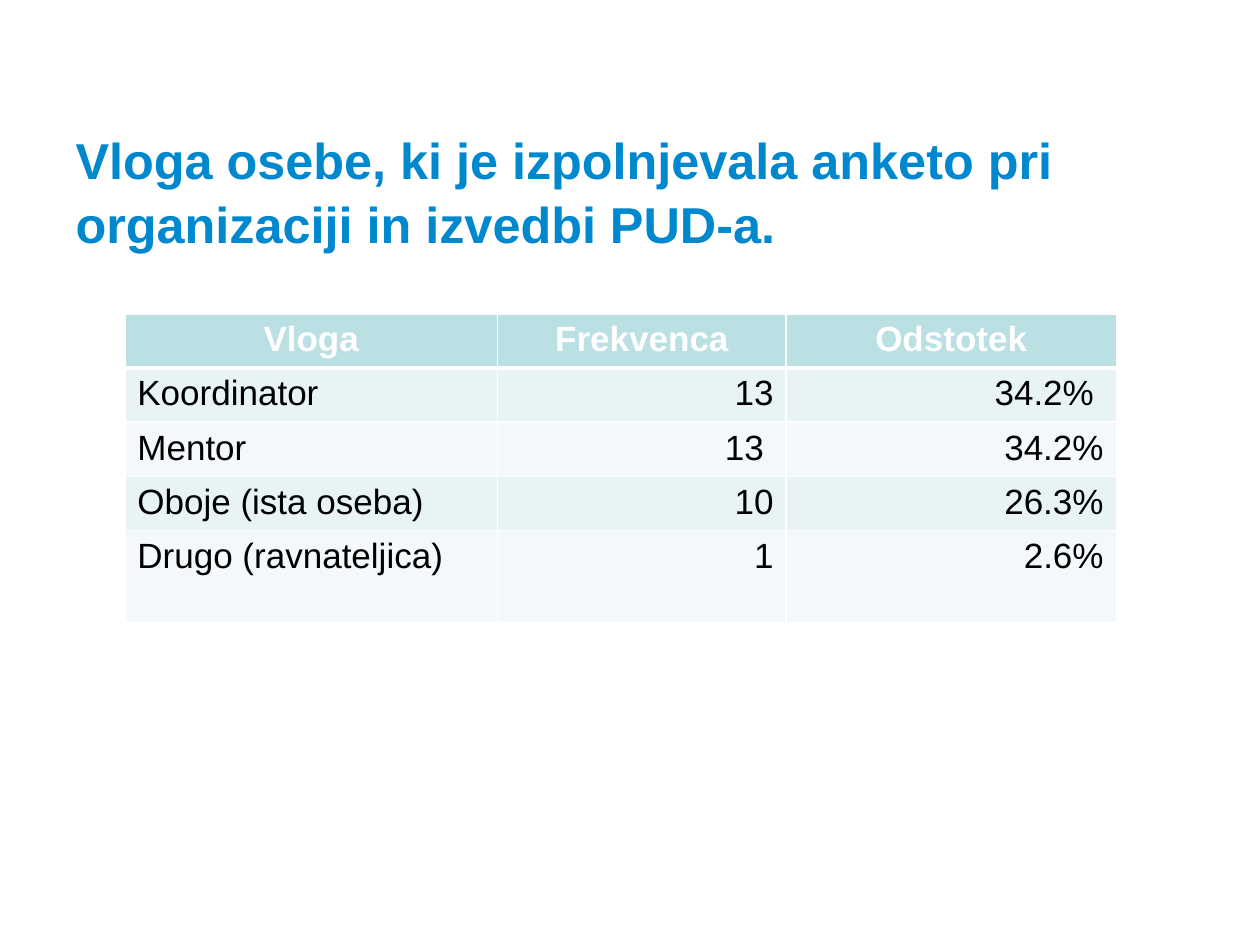
from lxml import etree
from pptx import Presentation
from pptx import util as u
from pptx.dml.color import RGBColor
from pptx.enum import text
from pptx.oxml import ns

COLORS = {"title": "0088CE", "header": "BBE0E3", "odd": "E7F3F4",
          "even": "F3F9FA", "white": "FFFFFF", "black": "000000"}
FONT = "Arial"
WIDTH, HEIGHT = u.Inches(10), u.Inches(7.5)
TITLE = "Vloga osebe, ki je izpolnjevala anketo pri organizaciji in izvedbi PUD-a."
ROWS = [
    ("Vloga", "Frekvenca", "Odstotek"),
    ("Koordinator", "13", "34.2% "),
    ("Mentor", "13 ", "34.2%"),
    ("Oboje (ista oseba)", "10", "26.3%"),
    ("Drugo (ravnateljica)", "1", "2.6%"),
]
COLUMN_WEIGHTS = (2.96, 2.29, 2.62)
ROW_WEIGHTS = (0.43, 0.43, 0.43, 0.43, 0.73)


def share(left, top, width, height):
    """Turn shares of the slide into a box in EMU."""
    return (int(left * WIDTH), int(top * HEIGHT),
            int(width * WIDTH), int(height * HEIGHT))


def style(paragraph, size, color, bold, align):
    """Set the font and alignment of a paragraph."""
    paragraph.alignment = align
    font = paragraph.font
    font.name, font.size, font.bold = FONT, u.Pt(size), bold
    font.color.rgb = RGBColor.from_string(COLORS[color])


def add_borders(cell, bottom):
    """Draw white borders round a cell, ahead of its fill."""
    properties = cell._tc.get_or_add_tcPr()
    widths = {"lnL": 1, "lnR": 1, "lnT": 1, "lnB": bottom}
    for index, (side, width) in enumerate(widths.items()):
        line = etree.Element(ns.qn(f"a:{side}"), w=str(u.Pt(width)))
        fill = etree.SubElement(line, ns.qn("a:solidFill"))
        etree.SubElement(fill, ns.qn("a:srgbClr"), val=COLORS["white"])
        properties.insert(index, line)


def add_title(page, box):
    """Place the slide title in the box."""
    title = page.shapes.title
    title.left, title.top, title.width, title.height = box
    frame = title.text_frame
    frame.text = TITLE
    frame.word_wrap = True
    frame.auto_size = text.MSO_AUTO_SIZE.NONE
    frame.vertical_anchor = text.MSO_ANCHOR.MIDDLE
    paragraph = frame.paragraphs[0]
    paragraph.line_spacing = 1.05
    style(paragraph, 28.8, "title", True, text.PP_ALIGN.LEFT)


def add_role_table(page, box):
    """Place the table of roles in the box."""
    table = page.shapes.add_table(len(ROWS), len(COLUMN_WEIGHTS), *box).table
    for column, weight in zip(table.columns, COLUMN_WEIGHTS):
        column.width = int(box[2] * weight / sum(COLUMN_WEIGHTS))
    for row, weight in zip(table.rows, ROW_WEIGHTS):
        row.height = int(box[3] * weight / sum(ROW_WEIGHTS))
    for row_index, values in enumerate(ROWS):
        header = row_index == 0
        fill = "header" if header else ("even", "odd")[row_index % 2]
        for column_index, value in enumerate(values):
            cell = table.cell(row_index, column_index)
            cell.text = value
            cell.fill.solid()
            cell.fill.fore_color.rgb = RGBColor.from_string(COLORS[fill])
            if header:
                align = text.PP_ALIGN.CENTER
            else:
                align = text.PP_ALIGN.RIGHT if column_index else text.PP_ALIGN.LEFT
            style(cell.text_frame.paragraphs[0], 20,
                  "white" if header else "black", header, align)
            add_borders(cell, 3 if header or row_index == 0 else 1)
            if row_index == 1:
                cell._tc.tcPr.find(ns.qn("a:lnT")).set("w", str(u.Pt(3)))


def main():
    """Build the deck and save it."""
    deck = Presentation()
    deck.slide_width, deck.slide_height = WIDTH, HEIGHT
    page = deck.slides.add_slide(deck.slide_layouts[5])
    add_title(page, share(0.05, 0.143, 0.9, 0.116))
    add_role_table(page, share(0.099, 0.332, 0.787, 0.327))
    deck.save("out.pptx")


if __name__ == "__main__":
    main()
